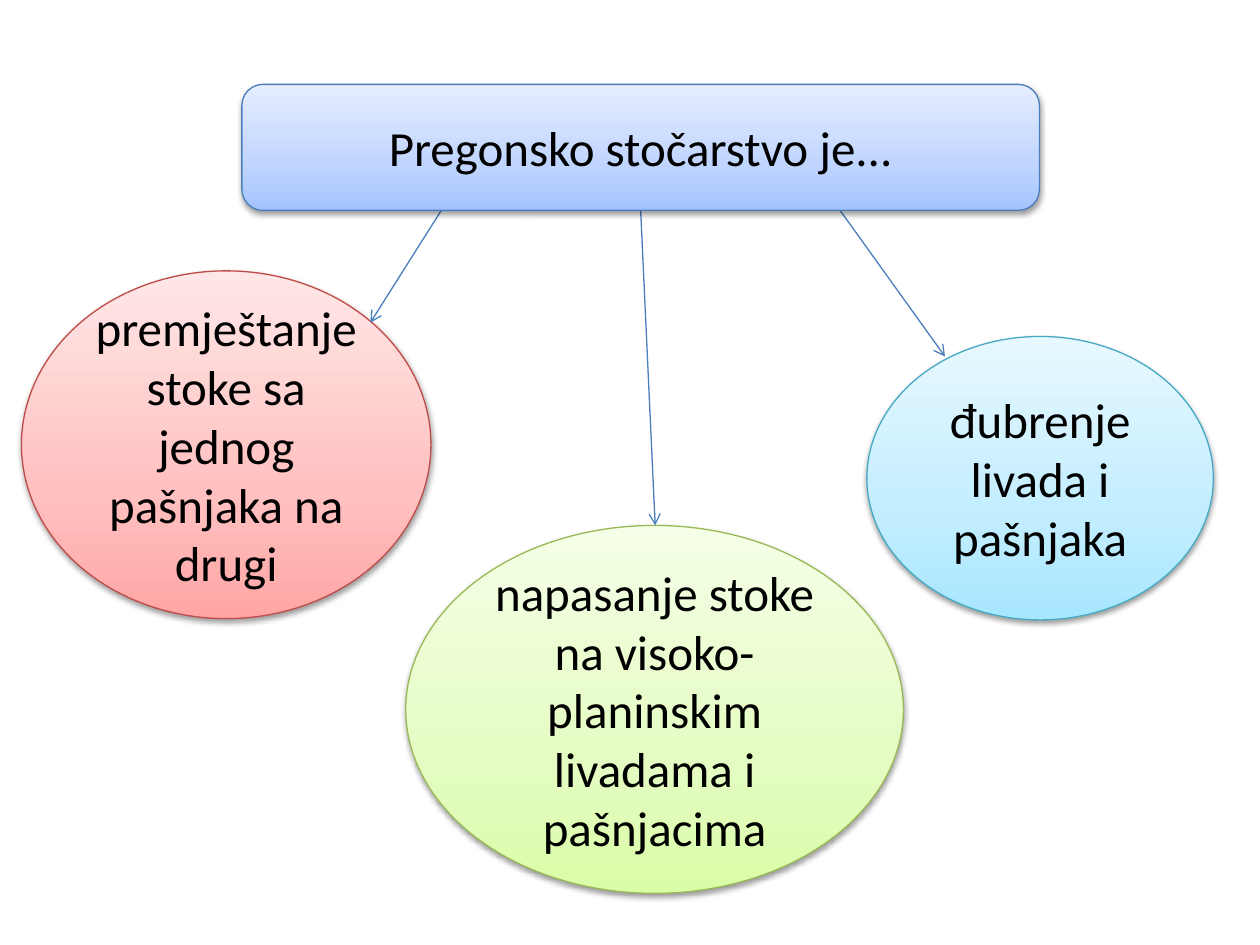
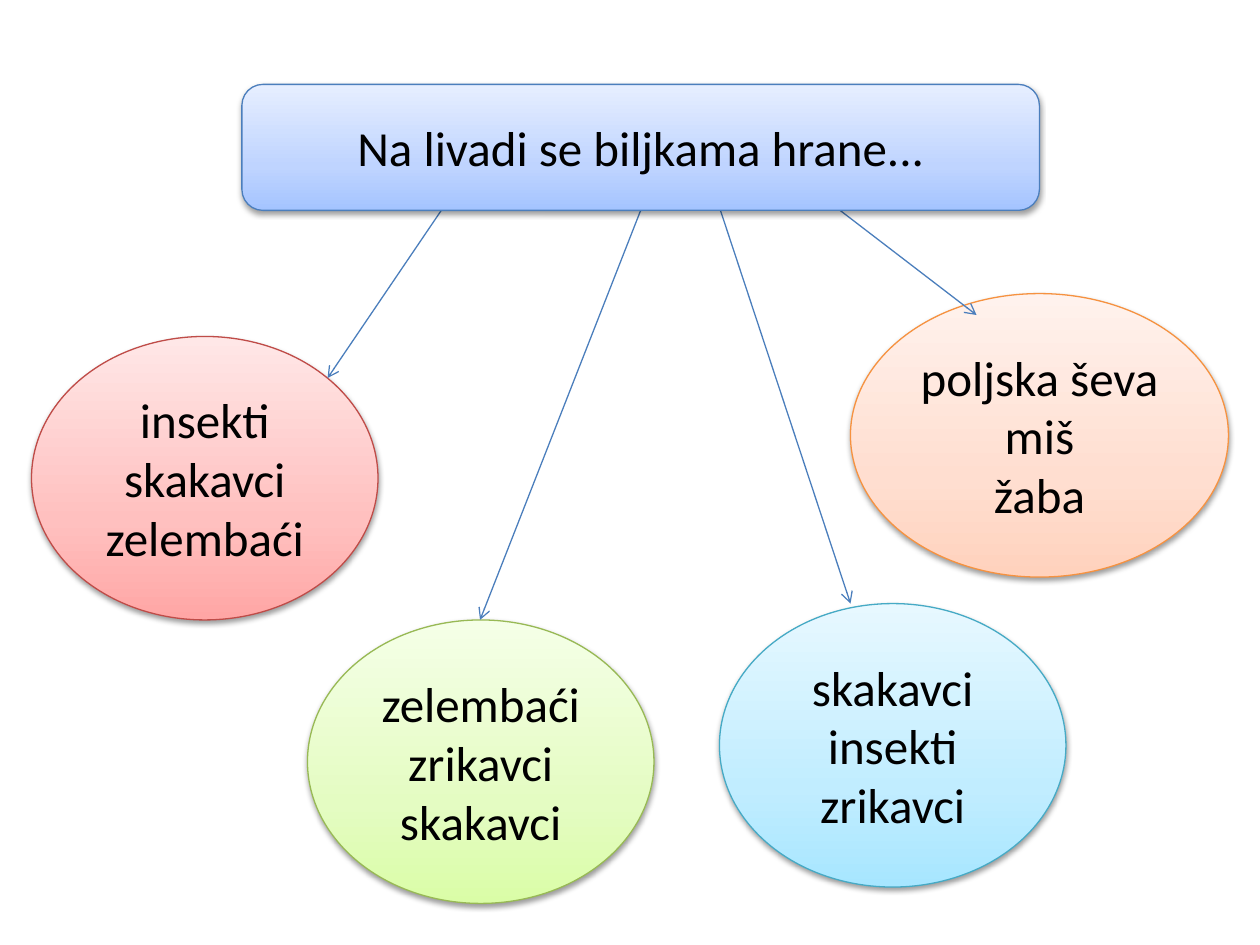
import copy
from dataclasses import dataclass

import lxml.etree
import pptx
import pptx.dml.color
import pptx.enum.shapes
import pptx.enum.text
import pptx.oxml.ns
import pptx.shapes.autoshape
import pptx.slide
import pptx.util

Inches = pptx.util.Inches
KIND = pptx.enum.shapes.MSO_SHAPE
qn = pptx.oxml.ns.qn


@dataclass(frozen=True)
class Tint:
    dark: str
    mid: str
    light: str
    edge: str


@dataclass(frozen=True)
class Box:
    left: float
    top: float
    width: float
    height: float


@dataclass(frozen=True)
class Oval:
    text: str
    tint: Tint
    box: Box
    start: float
    tip: tuple[float, float]


@dataclass(frozen=True)
class Page:
    title: str
    ovals: tuple[Oval, ...]


BLUE = Tint("A4C4FF", "BFD4FF", "E6EEFF", "4B7EBC")
RED = Tint("FFA6A5", "FFC0BF", "FFE7E7", "BF4C48")
GREEN = Tint("DAFDA7", "E4FCC2", "F5FFE7", "98B955")
AQUA = Tint("A7E6FF", "C1EDFF", "E7F8FF", "46AAC5")
PEACH = Tint("FFD2BD", "FFDED0", "FFF2ED", "F69240")

BANNER = Box(1.92, 0.67, 6.33, 1)
THIN = pptx.util.Pt(0.75)

PAGES = (
    Page("Pregonsko stočarstvo je...", (
        Oval("premještanje stoke sa jednog pašnjaka na drugi",
             RED, Box(0.17, 2.15, 3.25, 2.76), 0.25, (2.94, 2.56)),
        Oval("napasanje stoke na visoko-planinskim livadama i pašnjacima",
             GREEN, Box(3.22, 4.17, 3.95, 2.92), 0.5, (5.2, 4.17)),
        Oval("đubrenje livada i pašnjaka",
             AQUA, Box(6.88, 2.67, 2.75, 2.25), 0.75, (7.5, 2.83)),
    )),
    Page("Na livadi se biljkama hrane...", (
        Oval("insekti\nskakavci\nzelembaći",
             RED, Box(0.25, 2.67, 2.75, 2.25), 0.25, (2.6, 3)),
        Oval("zelembaći\nzrikavci\nskakavci",
             GREEN, Box(2.44, 4.92, 2.75, 2.25), 0.5, (3.81, 4.92)),
        Oval("skakavci\ninsekti\nzrikavci",
             AQUA, Box(5.71, 4.79, 2.75, 2.25), 0.6, (6.75, 4.79)),
        Oval("poljska ševa\nmiš\nžaba",
             PEACH, Box(6.75, 2.33, 3, 2.25), 0.75, (7.75, 2.5)),
    )),
)


def rgb(code: str) -> pptx.dml.color.RGBColor:
    return pptx.dml.color.RGBColor.from_string(code)


def style(item: object, **values: object) -> None:
    for name, value in values.items():
        setattr(item, name, value)


def shade(shape: pptx.shapes.autoshape.Shape, tint: Tint) -> None:
    shape.fill.gradient()
    shape.fill.gradient_angle = 90
    stops = next(shape.element.iter(qn("a:gsLst")))
    stops.append(copy.deepcopy(stops[0]))
    marks = ((0, tint.dark), (0.35, tint.mid), (1, tint.light))
    for stop, (place, code) in zip(shape.fill.gradient_stops, marks):
        stop.position = place
        stop.color.rgb = rgb(code)


def cast(shape: pptx.shapes.autoshape.Shape) -> None:
    shape.shadow.inherit = False
    glow = next(shape.element.iter(qn("a:effectLst")))
    drop = lxml.etree.SubElement(
        glow, qn("a:outerShdw"), blurRad="40000", dist="20000",
        dir="5400000", rotWithShape="0")
    black = lxml.etree.SubElement(drop, qn("a:srgbClr"), val="000000")
    lxml.etree.SubElement(black, qn("a:alpha"), val="38000")


def panel(slide: pptx.slide.Slide, kind: KIND, box: Box, tint: Tint,
          text: str) -> None:
    shape = slide.shapes.add_shape(
        kind, Inches(box.left), Inches(box.top),
        Inches(box.width), Inches(box.height))
    shade(shape, tint)
    shape.line.color.rgb = rgb(tint.edge)
    shape.line.width = THIN
    cast(shape)
    frame = shape.text_frame
    style(frame, text=text, word_wrap=True,
          vertical_anchor=pptx.enum.text.MSO_ANCHOR.MIDDLE)
    for line in frame.paragraphs:
        line.alignment = pptx.enum.text.PP_ALIGN.CENTER
        for run in line.runs:
            style(run.font, name="Calibri", size=pptx.util.Pt(28))
            run.font.color.rgb = rgb("000000")


def arrow(slide: pptx.slide.Slide, oval: Oval) -> None:
    left = BANNER.left + BANNER.width * oval.start
    link = slide.shapes.add_connector(
        pptx.enum.shapes.MSO_CONNECTOR.STRAIGHT,
        Inches(left), Inches(BANNER.top + BANNER.height),
        Inches(oval.tip[0]), Inches(oval.tip[1]))
    link.line.color.rgb = rgb(BLUE.edge)
    link.line.width = THIN
    edge = next(link._element.iter(qn("a:ln")))
    lxml.etree.SubElement(edge, qn("a:tailEnd"), type="arrow")
    lxml.etree.SubElement(edge.getparent(), qn("a:effectLst"))


def draw(slide: pptx.slide.Slide, page: Page) -> None:
    for oval in page.ovals:
        panel(slide, KIND.OVAL, oval.box, oval.tint, oval.text)
    for oval in page.ovals:
        arrow(slide, oval)
    panel(slide, KIND.ROUNDED_RECTANGLE, BANNER, BLUE, page.title)


def main() -> None:
    deck = pptx.Presentation()
    style(deck, slide_width=Inches(10), slide_height=Inches(7.5))
    for page in PAGES:
        draw(deck.slides.add_slide(deck.slide_layouts[6]), page)
    deck.save("out.pptx")


if __name__ == "__main__":
    main()
